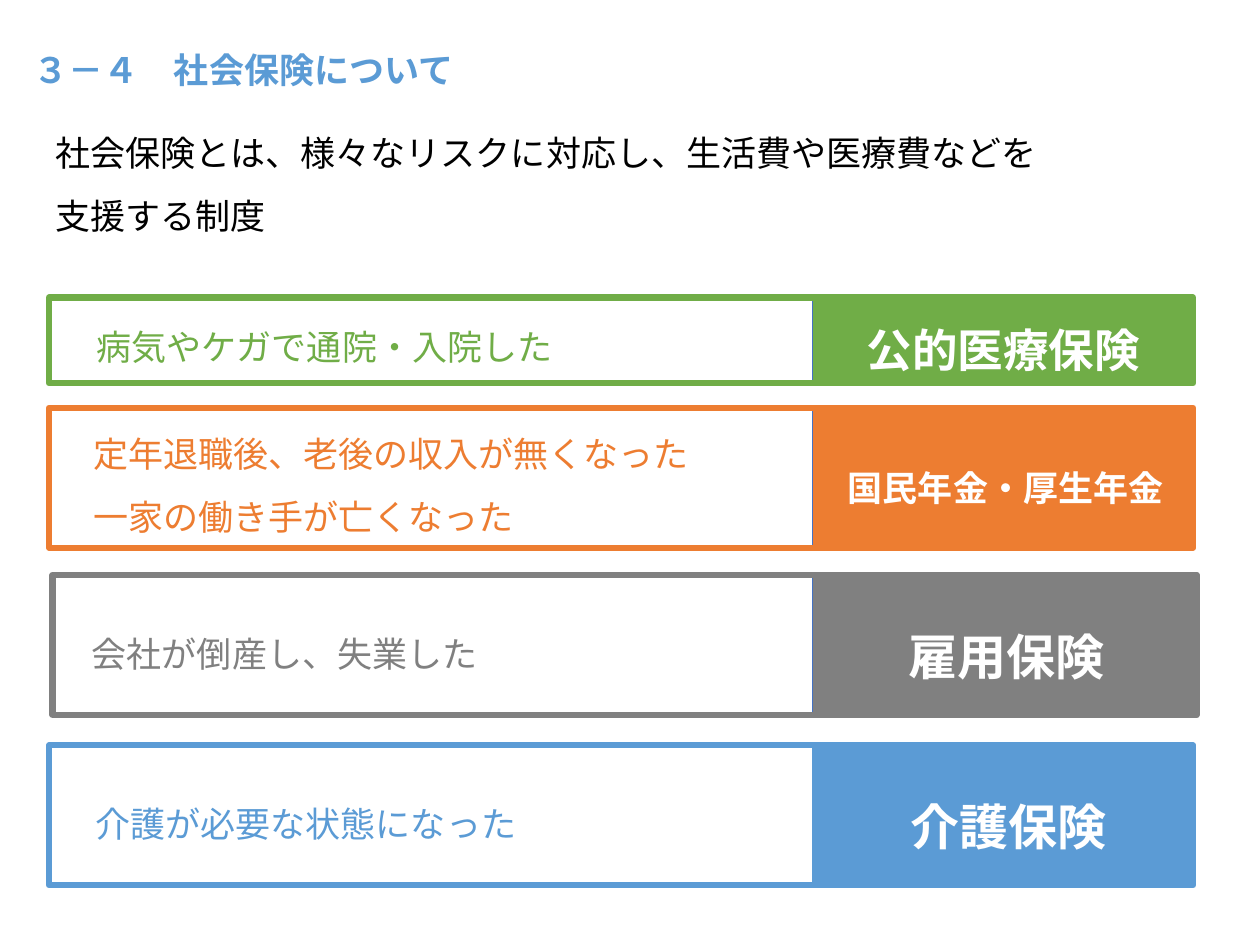
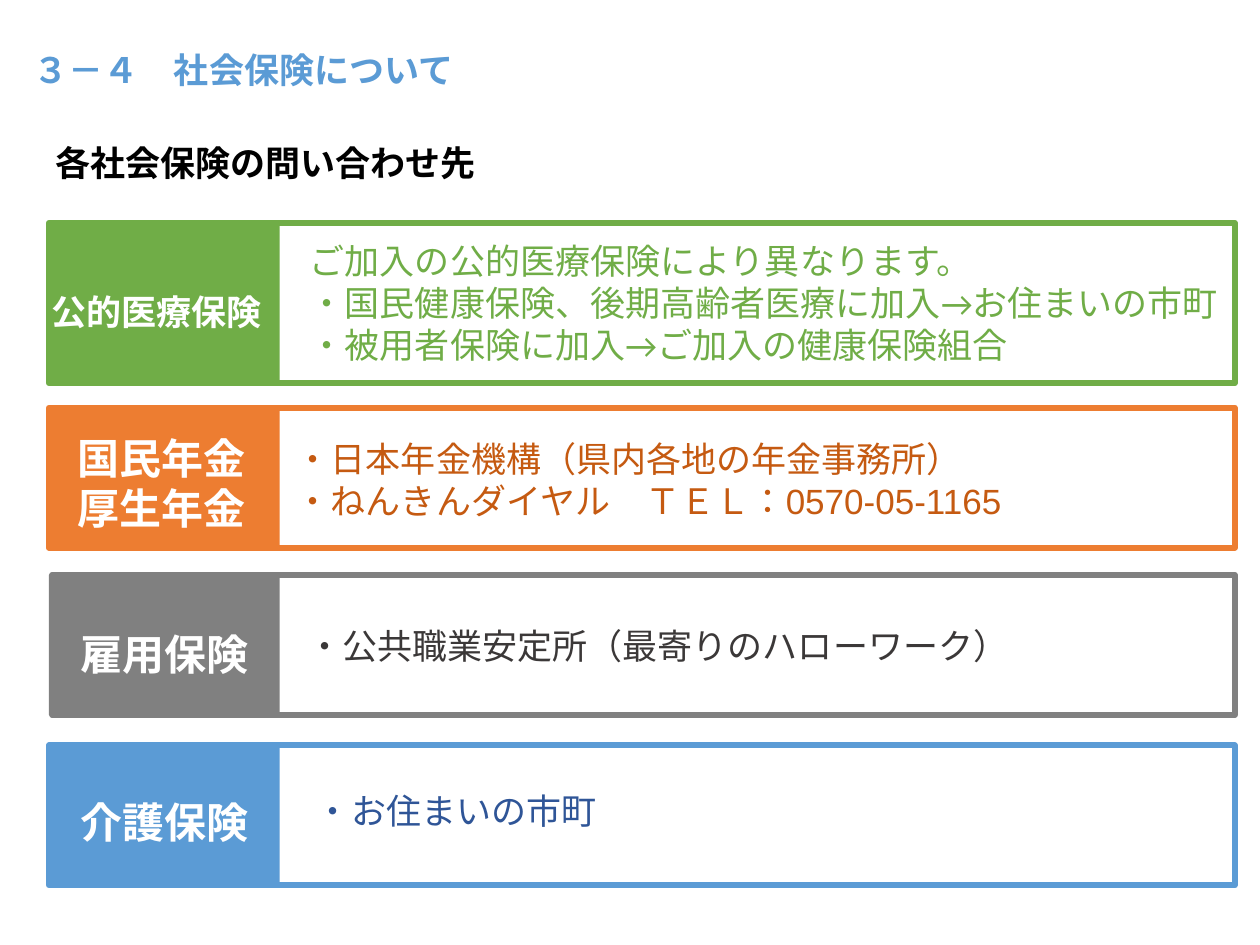
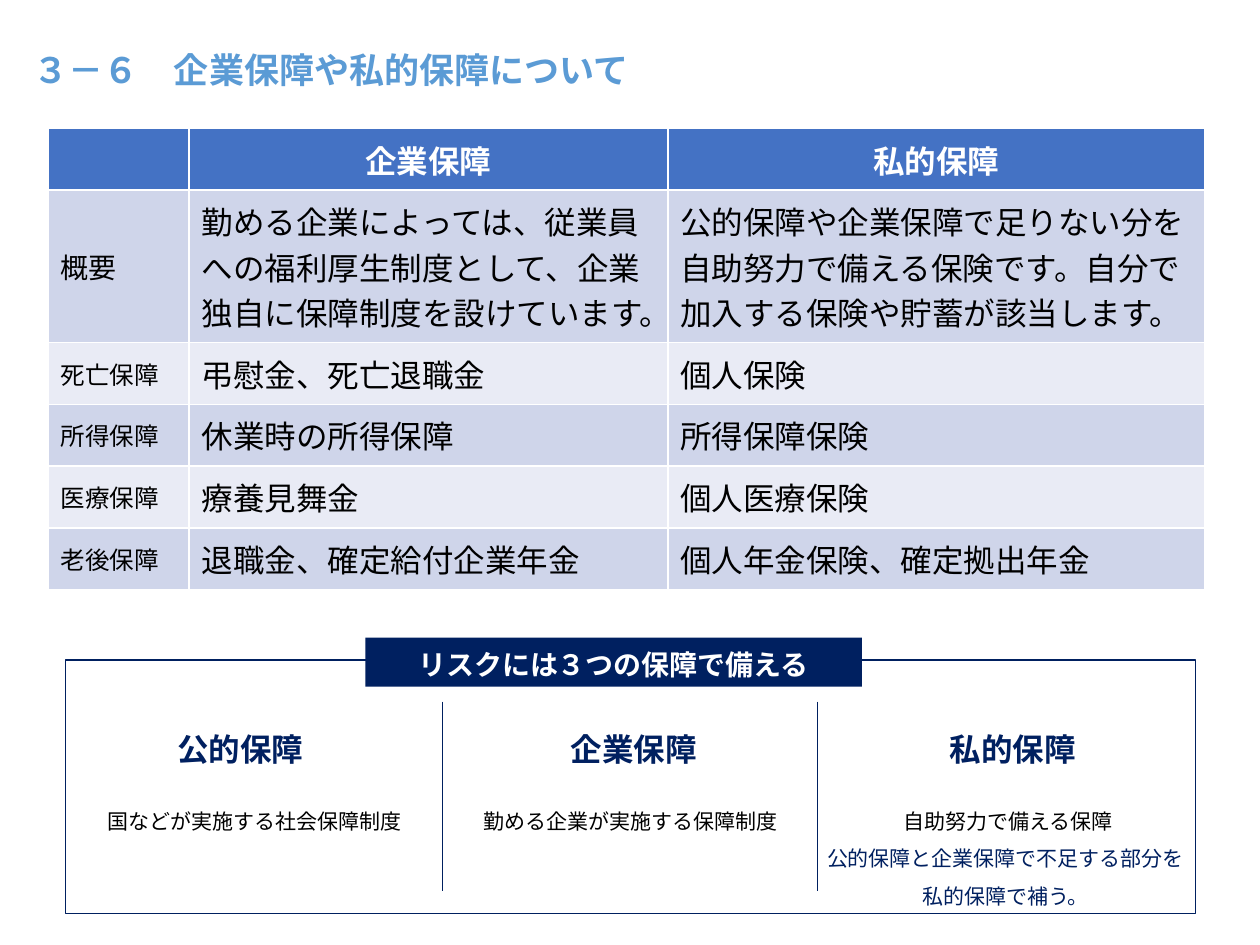
from lxml.etree import SubElement
from pptx import Presentation
from pptx.dml.color import RGBColor
from pptx.enum.lang import MSO_LANGUAGE_ID as Language
from pptx.enum.shapes import MSO_CONNECTOR as Connector, MSO_SHAPE as Shape
from pptx.enum.text import MSO_ANCHOR as Anchor, PP_ALIGN as Align
from pptx.oxml.ns import qn
from pptx.util import Pt

WHITE = RGBColor(0xFF, 0xFF, 0xFF)
BLACK = RGBColor(0x00, 0x00, 0x00)
GREEN = RGBColor(0x70, 0xAD, 0x47)
ORANGE = RGBColor(0xED, 0x7D, 0x31)
GRAY = RGBColor(0x80, 0x80, 0x80)
SKY = RGBColor(0x5B, 0x9B, 0xD5)
BLUE = RGBColor(0x44, 0x72, 0xC4)
NAVY = RGBColor(0x00, 0x20, 0x60)
RUST = RGBColor(0xC5, 0x5A, 0x11)
CHARCOAL = RGBColor(0x3B, 0x38, 0x38)
DEEP_BLUE = RGBColor(0x2F, 0x55, 0x97)
BAND_DARK = RGBColor(0xCF, 0xD5, 0xEA)
BAND_LIGHT = RGBColor(0xE9, 0xEB, 0xF5)

CALIBRI, ARIAL, NOTO = "Calibri", "Arial", "Noto Sans CJK JP"

BAND_LEFT = 28
# colour, frame left, top, bottom of each insurance band
BANDS = [
    (GREEN, 28, 170, 219),
    (ORANGE, 28, 233, 313),
    (GRAY, 30, 328.5, 408.5),
    (SKY, 28, 426, 506),
]


class SlideWriter:
    def __init__(self, deck):
        self.deck = deck
        self.page = None

    def start(self, title):
        self.page = self.deck.slides.add_slide(self.deck.slide_layouts[6])
        self.text((12.2, 26.6, 589, 28.8), [title], 20, SKY, NOTO, bold=True,
                  spacing=0.9, anchor=Anchor.MIDDLE)

    def style(self, para, size, color, font=CALIBRI, bold=False,
              align=Align.LEFT, spacing=None):
        para.alignment = align
        para.line_spacing = spacing
        para.font.size = Pt(size)
        para.font.name = font
        para.font.bold = bold
        para.font.color.rgb = color
        para.font.language_id = Language.JAPANESE

    def fill_text(self, frame, lines, size, color, font=CALIBRI, **options):
        frame.text = "\n".join(lines)
        for para in frame.paragraphs:
            self.style(para, size, color, font, **options)
            defaults = para._p.pPr.find(qn("a:defRPr"))
            SubElement(defaults, qn("a:ea"), typeface=CALIBRI)

    def text(self, place, lines, size, color, font=CALIBRI, anchor=Anchor.TOP,
             wrap=True, **options):
        frame = self.page.shapes.add_textbox(*map(Pt, place)).text_frame
        frame.word_wrap = wrap
        frame.vertical_anchor = anchor
        self.fill_text(frame, lines, size, color, font, **options)

    def rectangle(self, place, fill=None, line=None, width=0.5):
        box = self.page.shapes.add_shape(Shape.RECTANGLE, *map(Pt, place))
        box.shadow.inherit = False
        if fill is None:
            box.fill.background()
        else:
            box.fill.solid()
            box.fill.fore_color.rgb = fill
        if line is None:
            box.line.fill.background()
        else:
            box.line.color.rgb = line
            box.line.width = Pt(width)
        return box

    def divider(self, x, top, bottom):
        rule = self.page.shapes.add_connector(
            Connector.STRAIGHT, Pt(x), Pt(top), Pt(x), Pt(bottom))
        rule.line.color.rgb = NAVY
        rule.line.width = Pt(0.5)
        SubElement(rule._element.spPr, qn("a:effectLst"))

    def table(self, left, top, widths, heights, rows, label_sizes):
        """Header row, then banded rows with a smaller label in the first column."""
        grid = self.page.shapes.add_table(
            len(rows), len(widths), Pt(left), Pt(top),
            Pt(sum(widths)), Pt(sum(heights))).table
        for column, width in zip(grid.columns, widths):
            column.width = Pt(width)
        for r, (values, height) in enumerate(zip(rows, heights)):
            grid.rows[r].height = Pt(height)
            header = r == 0
            band = BLUE if header else (BAND_LIGHT, BAND_DARK)[r % 2]
            for c, value in enumerate(values):
                cell = grid.cell(r, c)
                cell.fill.solid()
                cell.fill.fore_color.rgb = band
                cell.vertical_anchor = Anchor.MIDDLE
                cell.text = value
                self.style(cell.text_frame.paragraphs[0],
                           18 if c else label_sizes[r],
                           WHITE if header else BLACK, bold=header,
                           align=Align.CENTER if header else Align.LEFT)


def risks_slide(writer):
    writer.start("３－４　社会保険について")
    writer.text((24.5, 85, 589, 28.8),
                ["社会保険とは、様々なリスクに対応し、生活費や医療費などを", "支援する制度"],
                20, BLACK, NOTO, spacing=1.5, anchor=Anchor.MIDDLE)
    # risk lines and place, then insurance name, place and size
    entries = [
        (["病気やケガで通院・入院した"], (48.2, 170.6, 283, 41.8),
         "公的医療保険", (465.8, 164.9, 215.3, 49.7), 26),
        (["定年退職後、老後の収入が無くなった", "一家の働き手が亡くなった"],
         (46.1, 231.8, 365, 77.8),
         "国民年金・厚生年金", (477.4, 251.3, 195.8, 41.8), 20),
        (["会社が倒産し、失業した"], (45.4, 345.6, 283, 41.8),
         "雇用保険", (511.9, 337.7, 169.2, 55.4), 28),
        (["介護が必要な状態になった"], (47.5, 442.8, 283, 41.8),
         "介護保険", (513.4, 434.9, 174.2, 55.4), 28),
    ]
    for band, (risk, risk_place, name, name_place, size) in zip(BANDS, entries):
        color, left, top, bottom = band
        height = bottom - top
        writer.rectangle((464.4, top, 218.2, height), color,
                         SKY if color == SKY else BLUE)
        writer.text(risk_place, risk, 20, color, spacing=1.5)
        writer.text(name_place, [name], size, WHITE, bold=True, spacing=1.5,
                    align=Align.CENTER if size == 26 else Align.LEFT)
        writer.rectangle((left, top, 653.8, height), line=color, width=3.5)


def contacts_slide(writer):
    writer.start("３－４　社会保険について")
    writer.text((24.5, 72.7, 589, 28.8), ["各社会保険の問い合わせ先"], 20, BLACK,
                NOTO, bold=True, spacing=1.5, anchor=Anchor.MIDDLE)
    # insurance name, place, size, font and spacing, then contacts, corner and colour
    entries = [
        (["公的医療保険"], (22.3, 150.5, 149.8, 40.3), 20, CALIBRI, 1.5,
         ["ご加入の公的医療保険により異なります。",
          "・国民健康保険、後期高齢者医療に加入→お住まいの市町",
          "・被用者保険に加入→ご加入の健康保険組合"], (170, 133.2), GREEN),
        (["国民年金", "厚生年金"], (37.4, 243.4, 195.8, 65.5), 24, ARIAL, None,
         ["・日本年金機構（県内各地の年金事務所）",
          "・ねんきんダイヤル　ＴＥＬ：0570-05-1165"], (162, 246.2), RUST),
        (["雇用保険"], (38.9, 341.3, 169.2, 46.8), 24, CALIBRI, 1.5,
         ["・公共職業安定所（最寄りのハローワーク）"], (168.5, 353.5), CHARCOAL),
        (["介護保険"], (38.9, 437, 174.2, 46.8), 24, CALIBRI, 1.5,
         ["・お住まいの市町"], (173.5, 447.8), DEEP_BLUE),
    ]
    for band, entry in zip(BANDS, entries):
        color, left, top, bottom = band
        name, name_place, size, font, spacing, contacts, corner, ink = entry
        if color == GREEN:
            top = 127.4
        height = bottom - top
        writer.rectangle((left, top, 705.6 - left, height), line=color, width=3.5)
        writer.rectangle((BAND_LEFT, top, 131.8, height), color)
        writer.text(name_place, name, size, WHITE, font, bold=True, spacing=spacing)
        writer.text((*corner, 535.7, 7.2 + 24 * len(contacts)), contacts, 20, ink, ARIAL)


def protection_slide(writer):
    writer.start("３－６　企業保障や私的保障について")
    rows = [
        ("", "企業保障", "私的保障"),
        ("概要",
         "勤める企業によっては、従業員への福利厚生制度として、企業独自に保障制度を設けています。",
         "公的保障や企業保障で足りない分を自助努力で備える保険です。自分で加入する保険や貯蓄が該当します。"),
        ("死亡保障", "弔慰金、死亡退職金", "個人保険"),
        ("所得保障", "休業時の所得保障", "所得保障保険"),
        ("医療保障", "療養見舞金", "個人医療保険"),
        ("老後保障", "退職金、確定給付企業年金", "個人年金保険、確定拠出年金"),
    ]
    writer.table(27.4, 73.4, (80.6, 273.6, 306.7), (35.3, 87.1) + (35.3,) * 4,
                 rows, (18, 16) + (14,) * 4)

    writer.rectangle((37.4, 377.3, 645.8, 144.7), line=NAVY, width=1)
    for x in (252.7, 467.3):
        writer.divider(x, 401, 509)
    banner = writer.rectangle((208.8, 364.3, 283.7, 28.1), NAVY)
    banner.text_frame.vertical_anchor = Anchor.TOP
    writer.fill_text(banner.text_frame, ["リスクには３つの保障で備える"], 16, WHITE,
                     bold=True, align=Align.CENTER, spacing=1.1)

    pillars = [
        ("公的保障", 94.3, "国などが実施する社会保障制度", 38.2),
        ("企業保障", 319, "勤める企業が実施する保障制度", 252.7),
        ("私的保障", 535.7, "自助努力で備える保障", 468.7),
    ]
    for name, name_left, summary, summary_left in pillars:
        writer.text((name_left, 413.5, 87.1, 28.8), [name], 18, NAVY,
                    bold=True, wrap=False)
        writer.text((summary_left, 451.2, 215, 26.6), [summary], 12, BLACK,
                    align=Align.CENTER, spacing=1.5)
    writer.text((459.4, 472.3, 230.4, 51.1),
                ["公的保障と企業保障で不足する部分を", "私的保障で補う。"], 12, NAVY,
                align=Align.CENTER, spacing=1.5)


def main():
    deck = Presentation()
    deck.slide_width, deck.slide_height = Pt(720), Pt(540)
    writer = SlideWriter(deck)
    risks_slide(writer)
    contacts_slide(writer)
    protection_slide(writer)
    deck.save("out.pptx")


if __name__ == "__main__":
    main()
